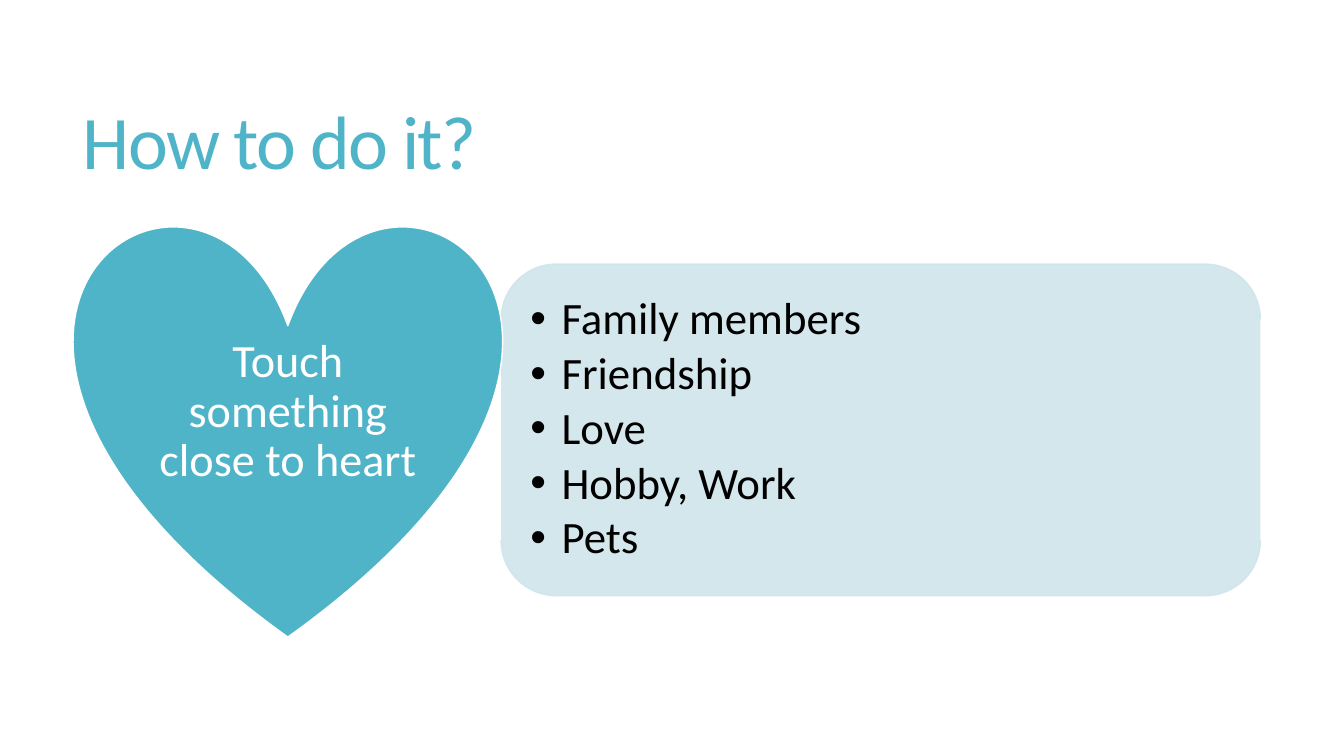
from pptx import Presentation
from pptx.dml.color import RGBColor
from pptx.enum.shapes import MSO_SHAPE
from pptx.enum.text import MSO_ANCHOR, MSO_AUTO_SIZE, PP_ALIGN
from pptx.oxml.xmlchemy import OxmlElement
from pptx.util import Inches, Pt

COLORS = {"teal": "50B4C8", "pale": "D0E5EB", "white": "FFFFFF", "black": "000000"}
FONT = "Calibri"
REASONS = ["Family members", "Friendship", "Love", "Hobby, Work", "Pets"]


def place(shape, left, top, width, height):
    shape.left, shape.top = Inches(left), Inches(top)
    shape.width, shape.height = Inches(width), Inches(height)


def write(shape, lines, size, color, align=PP_ALIGN.LEFT, spacing=0.9,
          after=0, inset=(0.1, 0.05), tracking=None, hanging=None):
    """Fill a shape with one paragraph per line; hanging is the bullet indent."""
    frame = shape.text_frame
    frame.word_wrap = True
    frame.auto_size = MSO_AUTO_SIZE.NONE
    frame.vertical_anchor = MSO_ANCHOR.MIDDLE
    frame.margin_left = frame.margin_right = Inches(inset[0])
    frame.margin_top = frame.margin_bottom = Inches(inset[1])
    for index, line in enumerate(lines):
        para = frame.add_paragraph() if index else frame.paragraphs[0]
        para.alignment = align
        para.line_spacing = spacing
        para.space_before, para.space_after = Pt(0), Pt(after)
        if hanging:
            properties = para._p.get_or_add_pPr()
            properties.set("marL", str(Inches(hanging)))
            properties.set("indent", str(-Inches(hanging)))
        span = para.add_run()
        span.text = line
        span.font.name, span.font.size = FONT, Pt(size)
        span.font.color.rgb = RGBColor.from_string(COLORS[color])
        if tracking:
            span._r.get_or_add_rPr().set("spc", str(round(tracking * 100)))


def add_filled(page, kind, box, fill, line):
    shape = page.shapes.add_shape(kind, *map(Inches, box))
    shape.shadow.inherit = False
    shape.fill.solid()
    shape.fill.fore_color.rgb = RGBColor.from_string(COLORS[fill])
    shape.line.color.rgb = RGBColor.from_string(COLORS[line])
    shape.line.width = Pt(1)
    return shape


def make_translucent(shape, percent):
    """Set the opacity of the fill and the line."""
    for color in shape.element.spPr.xpath(".//a:srgbClr"):
        alpha = OxmlElement("a:alpha")
        alpha.set("val", str(percent * 1000))
        color.append(alpha)


def add_title(page, left, top, width, height):
    title = page.shapes.title
    place(title, left, top, width, height)
    write(title, ["How to do it?"], 54, "teal", spacing=0.85, tracking=-1.2)


def add_list_panel(page, left, top, width, height):
    # The bracket is upright before its quarter turn, so its sides are swapped.
    shift = (width - height) / 2
    panel = add_filled(page, MSO_SHAPE.DOUBLE_BRACKET,
                       (left + shift, top - shift, height, width), "pale", "pale")
    panel.rotation = 90
    make_translucent(panel, 90)
    body = page.placeholders[1]
    body.element.addprevious(panel.element)
    place(body, left + 0.16, top + 0.16, width - 0.32, height - 0.32)
    write(body, REASONS, 32, "black", after=4.5, inset=(0.13, 0.07), hanging=0.31)


def add_heart(page, left, top, width, height):
    heart = add_filled(page, MSO_SHAPE.HEART, (left, top, width, height), "teal", "white")
    write(heart, ["Touch something close to heart"], 33, "white",
          align=PP_ALIGN.CENTER, inset=(0.13, 0.07))


def main():
    deck = Presentation()
    deck.slide_width, deck.slide_height = Inches(13.33), Inches(7.5)
    page = deck.slides.add_slide(deck.slide_layouts[1])
    add_title(page, 0.72, 0.55, 11.78, 1.81)
    add_list_panel(page, 4.97, 2.62, 7.53, 3.29)
    add_heart(page, 0.74, 2.2, 4.23, 4.12)
    deck.save("out.pptx")


if __name__ == "__main__":
    main()
